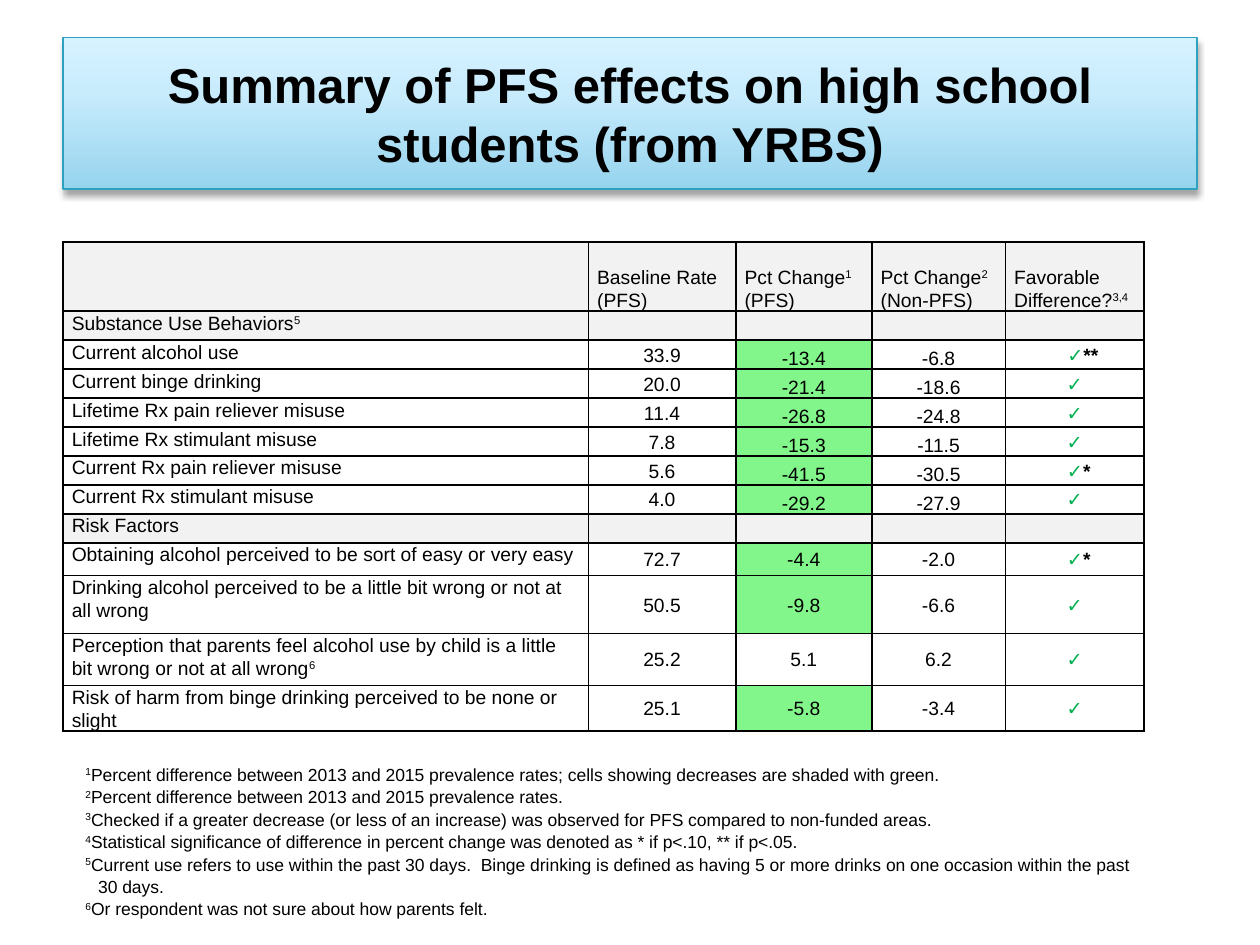
import pptx
import pptx.dml.color
import pptx.enum.shapes
import pptx.enum.text
import pptx.oxml
import pptx.util

Inches = pptx.util.Inches
RGBColor = pptx.dml.color.RGBColor
Align = pptx.enum.text.PP_ALIGN
Anchor = pptx.enum.text.MSO_ANCHOR

BLACK = RGBColor(0, 0, 0)
TEAL = RGBColor(0x2D, 0xA2, 0xBF)
GREY = RGBColor(0xF2, 0xF2, 0xF2)
GREEN = RGBColor(0x82, 0xF6, 0x8A)
TICK_GREEN = RGBColor(0x00, 0xB0, 0x50)
TITLE_STOPS = [
    (0, RGBColor(0x96, 0xD4, 0xEE)),
    (65, RGBColor(0xC9, 0xEC, 0xFC)),
    (100, RGBColor(0xD7, 0xF2, 0xFF)),
]

FONT = "Arial"
NAMESPACE = 'xmlns:a="http://schemas.openxmlformats.org/drawingml/2006/main"'
TICK = "✓"
STAR_INDENT = 0.065

COLUMN_WIDTHS = [4.17, 1.17, 1.08, 1.06, 1.1]
ROW_HEIGHTS = [0.55] + [0.23] * 8 + [0.26, 0.46, 0.41, 0.36]
HEADINGS = [
    "",
    "Baseline Rate\n(PFS)",
    "Pct Change^1^\n(PFS)",
    "Pct Change^2^\n(Non-PFS)",
    "Favorable\nDifference?^3,4^",
]
SECTIONS = [
    ("Substance Use Behaviors^5^", Anchor.BOTTOM, [
        ("Current alcohol use", 33.9, -13.4, -6.8, "**"),
        ("Current binge drinking", 20.0, -21.4, -18.6, ""),
        ("Lifetime Rx pain reliever misuse", 11.4, -26.8, -24.8, ""),
        ("Lifetime Rx stimulant misuse", 7.8, -15.3, -11.5, ""),
        ("Current Rx pain reliever misuse", 5.6, -41.5, -30.5, "*"),
        ("Current Rx stimulant misuse", 4.0, -29.2, -27.9, ""),
    ]),
    ("Risk Factors", Anchor.MIDDLE, [
        ("Obtaining alcohol perceived to be sort of easy or very easy", 72.7, -4.4, -2.0, "*"),
        ("Drinking alcohol perceived to be a little bit wrong or not at all wrong",
         50.5, -9.8, -6.6, ""),
        ("Perception that parents feel alcohol use by child is a little bit wrong "
         "or not at all wrong^6^", 25.2, 5.1, 6.2, ""),
        ("Risk of harm from binge drinking perceived to be none or slight",
         25.1, -5.8, -3.4, ""),
    ]),
]
FOOTNOTES = [
    "Percent difference between 2013 and 2015 prevalence rates; "
    "cells showing decreases are shaded with green.",
    "Percent difference between 2013 and 2015 prevalence rates.",
    "Checked if a greater decrease (or less of an increase) was observed "
    "for PFS compared to non-funded areas.",
    "Statistical significance of difference in percent change was denoted "
    "as * if p<.10, ** if p<.05.",
    "Current use refers to use within the past 30 days.  Binge drinking is defined as "
    "having 5 or more drinks on one occasion within the past 30 days.",
    "Or respondent was not sure about how parents felt.",
]
HANGING_FROM = 4


def set_attributes(target, values):
    for name, value in values.items():
        setattr(target, name, value)


def add_xml(parent, markup):
    parent.append(pptx.oxml.parse_xml(markup))


def add_span(para, text, size, color=BLACK, bold=False, raised=False):
    span = para.add_run()
    span.text = text
    set_attributes(span.font, {"name": FONT, "size": pptx.util.Pt(size), "bold": bold})
    span.font.color.rgb = color
    if raised:
        span._r.get_or_add_rPr().set("baseline", "30000")


def write_lines(frame, lines, size, align=Align.LEFT):
    for index, line in enumerate(lines):
        para = frame.add_paragraph() if index else frame.paragraphs[0]
        set_attributes(para, {"alignment": align, "line_spacing": 1.07})
        for part, text in enumerate(line.split("^")):
            if text:
                add_span(para, text, size, raised=part % 2 == 1)


def add_title(slide):
    box = slide.shapes.add_shape(
        pptx.enum.shapes.MSO_SHAPE.RECTANGLE, Inches(0.5), Inches(0.3), Inches(9), Inches(1.2))
    properties = box._element.spPr
    stops = "".join(
        f'<a:gs pos="{place * 1000}"><a:srgbClr val="{color}"/></a:gs>'
        for place, color in TITLE_STOPS)
    add_xml(properties, f'<a:gradFill {NAMESPACE} rotWithShape="1"><a:gsLst>{stops}</a:gsLst>'
                        '<a:lin ang="16200000" scaled="0"/></a:gradFill>')
    box.line.color.rgb = TEAL
    box.line.width = pptx.util.Pt(0.75)
    add_xml(properties, f'<a:effectLst {NAMESPACE}><a:outerShdw blurRad="50800" dist="38100" '
                        'dir="5400000" rotWithShape="0"><a:srgbClr val="000000">'
                        '<a:alpha val="35000"/></a:srgbClr></a:outerShdw></a:effectLst>')
    frame = box.text_frame
    set_attributes(frame, {"word_wrap": True, "vertical_anchor": Anchor.MIDDLE})
    para = frame.paragraphs[0]
    para.alignment = Align.CENTER
    add_span(para, "Summary of PFS effects on high school students (from YRBS)", 28, bold=True)


def style_cell(cell, fill, anchor):
    set_attributes(cell, {
        "margin_left": Inches(0.07), "margin_right": Inches(0.07),
        "margin_top": 0, "margin_bottom": 0, "vertical_anchor": anchor,
    })
    for side in "LRTB":
        add_xml(cell._tc.get_or_add_tcPr(),
                f'<a:ln{side} {NAMESPACE} w="12700"><a:solidFill>'
                f'<a:srgbClr val="{BLACK}"/></a:solidFill></a:ln{side}>')
    if fill is None:
        cell.fill.background()
    else:
        cell.fill.solid()
        cell.fill.fore_color.rgb = fill


def fill_cell(cell, text, fill=None, anchor=Anchor.TOP, align=Align.LEFT):
    style_cell(cell, fill, anchor)
    write_lines(cell.text_frame, text.split("\n"), 11, align)
    if not text:
        add_xml(cell.text_frame.paragraphs[0]._p, f'<a:endParaRPr {NAMESPACE} sz="1100"/>')


def fill_tick(cell, stars):
    style_cell(cell, None, Anchor.MIDDLE)
    para = cell.text_frame.paragraphs[0]
    set_attributes(para, {"alignment": Align.CENTER, "line_spacing": 1.07})
    add_span(para, TICK, 11, TICK_GREEN, bold=True)
    if stars:
        para._p.get_or_add_pPr().set("marL", str(Inches(STAR_INDENT * len(stars))))
        add_span(para, stars, 11, bold=True)


def fill_measure(cells, measure, change_anchor):
    label, baseline, change, other_change, stars = measure
    fill_cell(cells[0], label)
    fill_cell(cells[1], f"{baseline:.1f}", None, Anchor.MIDDLE, Align.CENTER)
    shade = GREEN if change < 0 else None
    fill_cell(cells[2], f"{change:.1f}", shade, change_anchor, Align.CENTER)
    fill_cell(cells[3], f"{other_change:.1f}", None, change_anchor, Align.CENTER)
    fill_tick(cells[4], stars)


def add_effects_table(slide):
    table = slide.shapes.add_table(
        len(ROW_HEIGHTS), len(COLUMN_WIDTHS), Inches(0.5), Inches(1.92),
        Inches(sum(COLUMN_WIDTHS)), Inches(sum(ROW_HEIGHTS))).table
    set_attributes(table, {"first_row": False, "horz_banding": False})
    for column, width in zip(table.columns, COLUMN_WIDTHS):
        column.width = Inches(width)
    for row, height in zip(table.rows, ROW_HEIGHTS):
        row.height = Inches(height)
    rows = iter(table.rows)
    for cell, heading in zip(next(rows).cells, HEADINGS):
        fill_cell(cell, heading, GREY, Anchor.BOTTOM)
    for section, change_anchor, measures in SECTIONS:
        for index, cell in enumerate(next(rows).cells):
            fill_cell(cell, "" if index else section, GREY)
        for measure in measures:
            fill_measure(list(next(rows).cells), measure, change_anchor)


def add_footnotes(slide):
    box = slide.shapes.add_textbox(Inches(0.58), Inches(6), Inches(8.58), Inches(1.35))
    frame = box.text_frame
    frame.word_wrap = True
    write_lines(frame, [f"^{number}^{note}" for number, note in enumerate(FOOTNOTES, 1)], 10)
    for para in frame.paragraphs[HANGING_FROM:]:
        properties = para._p.get_or_add_pPr()
        properties.set("marL", str(Inches(0.1)))
        properties.set("indent", str(Inches(-0.1)))


def main():
    deck = pptx.Presentation()
    set_attributes(deck, {"slide_width": Inches(10), "slide_height": Inches(7.5)})
    slide = deck.slides.add_slide(deck.slide_layouts[6])
    add_title(slide)
    add_effects_table(slide)
    add_footnotes(slide)
    deck.save("out.pptx")


if __name__ == "__main__":
    main()
